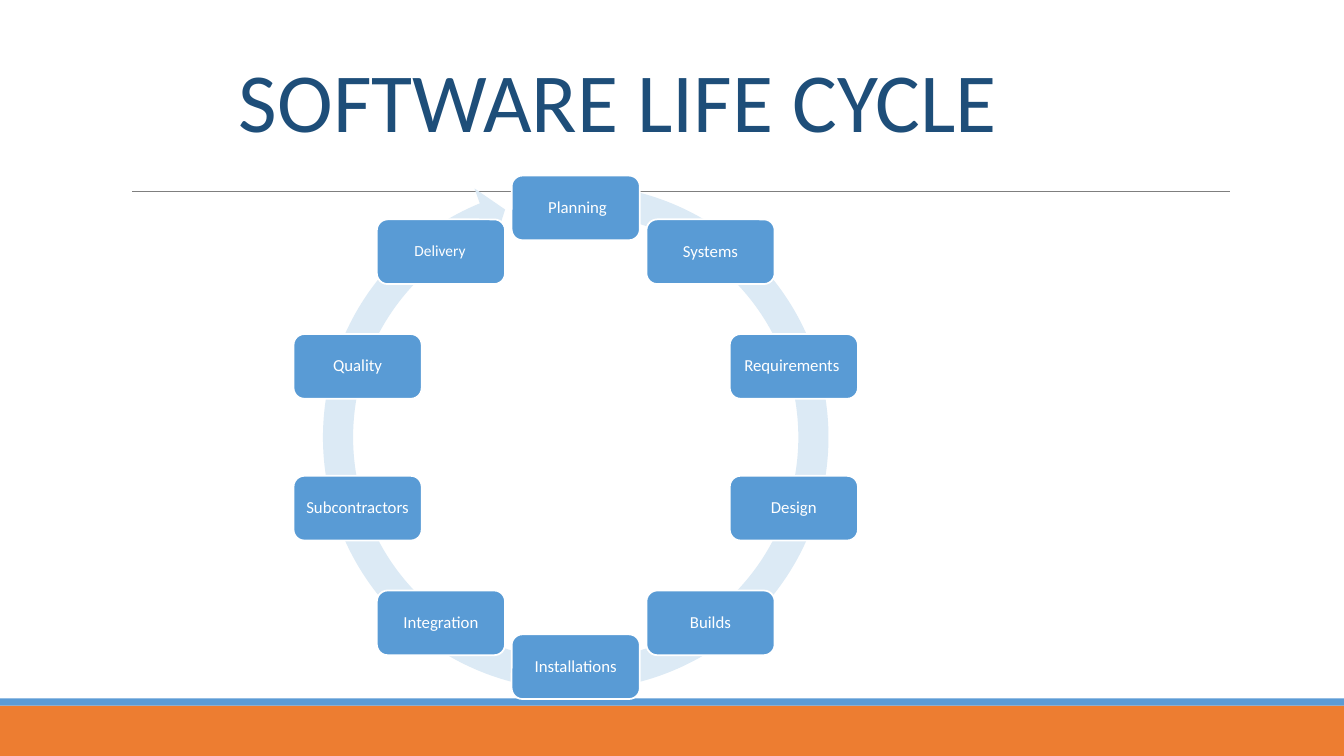
from dataclasses import dataclass
from math import atan, cos, hypot, radians, degrees, sin, tan

from lxml import etree
from pptx import Presentation
from pptx.dml.color import RGBColor
from pptx.enum.shapes import MSO_CONNECTOR, MSO_SHAPE
from pptx.enum.text import MSO_ANCHOR, PP_ALIGN
from pptx.oxml.ns import qn
from pptx.util import Cm, Pt

RECT = MSO_SHAPE.RECTANGLE
ROUND = MSO_SHAPE.ROUNDED_RECTANGLE
STRAIGHT = MSO_CONNECTOR.STRAIGHT
MIDDLE = MSO_ANCHOR.MIDDLE
BOTTOM = MSO_ANCHOR.BOTTOM
CENTER = PP_ALIGN.CENTER


@dataclass(frozen=True)
class Theme:
    font: str = "Calibri"
    title: str = "1E4E79"
    rule: str = "7F7F7F"
    base: str = "ED7D31"
    trim: str = "5B9BD5"
    ring: str = "DCEAF5"
    step: str = "599BD5"
    white: str = "FFFFFF"
    title_size: float = 60
    step_size: float = 12
    small_size: float = 11
    tiny_size: float = 6


@dataclass(frozen=True)
class Run:
    text: str
    size: float
    color: str


@dataclass(frozen=True)
class Box:
    left: float
    top: float
    width: float
    height: float


@dataclass(frozen=True)
class Bar:
    box: Box
    color: str


@dataclass(frozen=True)
class Step:
    runs: tuple[Run, ...]
    after: float = 4.2


@dataclass(frozen=True)
class Node:
    spot: tuple[float, float]
    bends: tuple[tuple[float, float], ...] = ()


THEME = Theme()
WIDTH, HEIGHT = 33.87, 19.05
MID_X, MID_Y = 14.51, 11.02
ORBIT, OUTER, INNER = 5.78, 6.37, 5.61
STEP_W, STEP_H = 3.23, 1.63
START, END_OUT, END_IN = 9.4, 337.7, 336.9
PIECES = 5
RING = Box(7.72, 4.24, 13.54, 13.54)
ARROW = [Node((11.96, 4.75)), Node((12.73, 5.28)), Node((12.42, 6.25))]
BARS = [
    Bar(Box(0, 17.78, WIDTH, 1.27), THEME.base),
    Bar(Box(0, 17.6, WIDTH, 0.18), THEME.trim),
]
TITLE = Run("SOFTWARE LIFE CYCLE ", THEME.title_size, THEME.title)
NAMES = [" Planning", "Systems", "Requirements ", "Design", "Builds",
         "Installations", "Integration", "Subcontractors", "Quality"]
STEPS = [Step((Run(name, THEME.step_size, THEME.white),)) for name in NAMES]
STEPS.append(Step((Run("Delivery", THEME.small_size, THEME.white),
                   Run(" ", THEME.tiny_size, THEME.white)), 3.9))
TITLE_FRAME = {
    "word_wrap": True, "vertical_anchor": BOTTOM,
    "margin_left": Cm(0.25), "margin_right": Cm(0.25),
    "margin_top": Cm(0.13), "margin_bottom": Cm(0.13),
}
STEP_FRAME = {
    "word_wrap": True, "vertical_anchor": MIDDLE,
    "margin_left": Cm(0.2), "margin_right": Cm(0.2),
    "margin_top": Cm(0.2), "margin_bottom": Cm(0.2),
}


def apply(target, values: dict) -> None:
    for name, value in values.items():
        setattr(target, name, value)


def place(box: Box) -> tuple:
    return Cm(box.left), Cm(box.top), Cm(box.width), Cm(box.height)


def polar(angle: float, reach: float) -> tuple[float, float]:
    turn = radians(angle)
    return MID_X + reach * sin(turn), MID_Y - reach * cos(turn)


def arc(first: float, last: float, reach: float) -> list[Node]:
    sweep = (last - first) / PIECES
    pull = 4 / 3 * tan(radians(sweep) / 4)
    lean, far = degrees(atan(pull)), reach * hypot(1, pull)
    nodes = [Node(polar(first, reach))]
    for i in range(PIECES):
        start, end = first + sweep * i, first + sweep * (i + 1)
        bends = polar(start + lean, far), polar(end - lean, far)
        nodes.append(Node(polar(end, reach), bends))
    return nodes


def paint(shape, color: str) -> None:
    shape.shadow.inherit = False
    shape.fill.solid()
    shape.fill.fore_color.rgb = RGBColor.from_string(color)
    shape.line.fill.background()


def write(shape, runs: tuple[Run, ...], frame: dict, para: dict) -> None:
    apply(shape.text_frame, frame)
    line = shape.text_frame.paragraphs[0]
    apply(line, para)
    for item in runs:
        run = line.add_run()
        run.text = item.text
        apply(run.font, {"name": THEME.font, "size": Pt(item.size)})
        run.font.color.rgb = RGBColor.from_string(item.color)


def draw_rule(slide) -> None:
    rule = slide.shapes.add_connector(
        STRAIGHT, Cm(3.33), Cm(4.82), Cm(31), Cm(4.82))
    rule.line.color.rgb = RGBColor.from_string(THEME.rule)
    rule.line.width = Pt(0.75)
    etree.SubElement(rule.element.spPr, qn("a:effectLst"))


def draw_bar(slide, bar: Bar) -> None:
    paint(slide.shapes.add_shape(RECT, *place(bar.box)), bar.color)


def draw_title(slide) -> None:
    title = slide.shapes.add_textbox(*place(Box(0, 0.79, 31.62, 3.1)))
    write(title, (TITLE,), TITLE_FRAME,
          {"alignment": CENTER, "line_spacing": 0.85})


def bend(shape, nodes: list[Node], box: Box) -> None:
    left, top, width, height = place(box)
    track = next(shape.element.iter(qn("a:path")))
    track.set("w", str(width))
    track.set("h", str(height))
    for part, node in zip(list(track), nodes):
        if node.bends:
            part.tag = qn("a:cubicBezTo")
        for point in list(part):
            part.remove(point)
        for x, y in (*node.bends, node.spot):
            etree.SubElement(part, qn("a:pt"),
                             x=str(Cm(x) - left), y=str(Cm(y) - top))
    apply(shape, {"left": left, "top": top, "width": width, "height": height})


def draw_ring(slide) -> None:
    nodes = arc(START, END_OUT, OUTER) + ARROW + arc(END_IN, START, INNER)
    points = [(Cm(node.spot[0]), Cm(node.spot[1])) for node in nodes]
    outline = slide.shapes.build_freeform(*points[0])
    outline.add_line_segments(points[1:], close=True)
    ring = outline.convert_to_shape()
    paint(ring, THEME.ring)
    bend(ring, nodes, RING)


def draw_step(slide, step: Step, angle: float) -> None:
    x, y = polar(angle, ORBIT)
    box = Box(x - STEP_W / 2, y - STEP_H / 2, STEP_W, STEP_H)
    shape = slide.shapes.add_shape(ROUND, *place(box))
    paint(shape, THEME.step)
    shape.line.color.rgb = RGBColor.from_string(THEME.white)
    shape.line.width = Pt(1.25)
    write(shape, step.runs, STEP_FRAME,
          {"alignment": CENTER, "line_spacing": 0.9,
           "space_after": Pt(step.after)})


def main() -> None:
    deck = Presentation()
    apply(deck, {"slide_width": Cm(WIDTH), "slide_height": Cm(HEIGHT)})
    slide = deck.slides.add_slide(deck.slide_layouts[6])
    draw_rule(slide)
    for bar in BARS:
        draw_bar(slide, bar)
    draw_title(slide)
    draw_ring(slide)
    for i, step in enumerate(STEPS):
        draw_step(slide, step, 360 * i / len(STEPS))
    deck.save("out.pptx")


if __name__ == "__main__":
    main()
